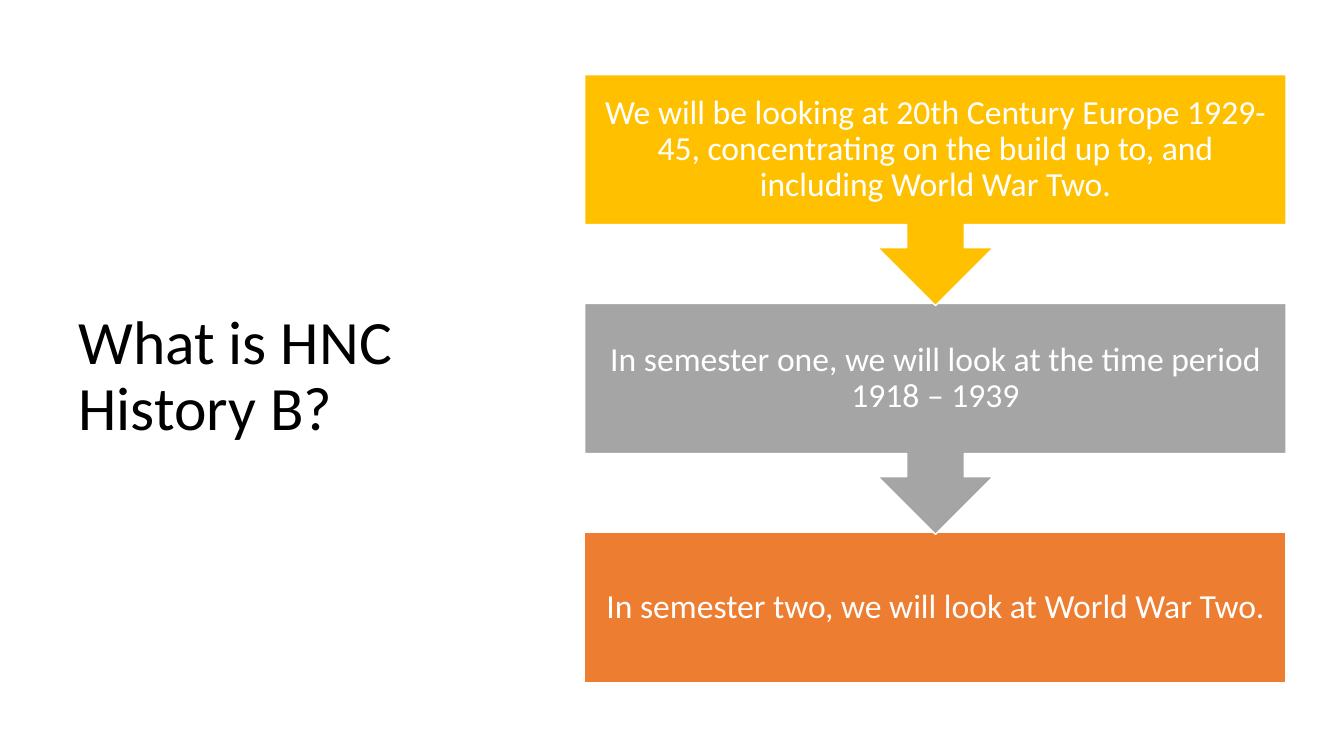
from dataclasses import dataclass

import pptx
import pptx.dml.color
import pptx.enum.shapes
import pptx.enum.text
import pptx.util

EMU_PER_PX = 9525
SLIDE_WIDTH, SLIDE_HEIGHT = 1280, 720
STEP_LEFT, STEP_TOP, STEP_WIDTH, STEP_PITCH = 557, 71, 668, 218
BOX_HEIGHT, CALLOUT_HEIGHT = 143, 220
BOX_INSET = 18

Color = pptx.dml.color.RGBColor
ShapeType = pptx.enum.shapes.MSO_SHAPE
Align = pptx.enum.text.PP_ALIGN


@dataclass(frozen=True)
class Theme:
    font: str = "Calibri"
    title_size: int = 44
    step_size: int = 24
    dark: Color = Color(0x00, 0x00, 0x00)
    light: Color = Color(0xFF, 0xFF, 0xFF)
    gold: Color = Color(0xFF, 0xC0, 0x00)
    gray: Color = Color(0xA5, 0xA5, 0xA5)
    orange: Color = Color(0xED, 0x7D, 0x31)


THEME = Theme()


@dataclass(frozen=True)
class Step:
    text: str
    fill: Color


STEPS = [
    Step(
        "We will be looking at 20th Century Europe 1929-45, "
        "concentrating on the build up to, and including World War Two.",
        THEME.gold,
    ),
    Step("In semester one, we will look at the time period 1918 – 1939", THEME.gray),
    Step("In semester two, we will look at World War Two.", THEME.orange),
]


def px(length: int) -> pptx.util.Emu:
    return pptx.util.Emu(length * EMU_PER_PX)


def set_attributes(target: object, values: dict[str, object]) -> None:
    for name, value in values.items():
        setattr(target, name, value)


def write_text(
    text_frame: pptx.text.text.TextFrame,
    text: str,
    size: int,
    color: Color,
    alignment: Align,
) -> None:
    set_attributes(text_frame, {
        "text": text,
        "word_wrap": True,
        "auto_size": pptx.enum.text.MSO_AUTO_SIZE.NONE,
        "vertical_anchor": pptx.enum.text.MSO_ANCHOR.MIDDLE,
    })
    paragraph = text_frame.paragraphs[0]
    set_attributes(paragraph, {"alignment": alignment, "line_spacing": 0.9})
    font = paragraph.runs[0].font
    set_attributes(font, {"name": THEME.font, "size": pptx.util.Pt(size)})
    font.color.rgb = color


def draw_title(slide: pptx.slide.Slide, text: str) -> None:
    title = slide.shapes.title
    set_attributes(title, {
        "left": px(65), "top": px(122), "width": px(378), "height": px(475),
    })
    write_text(title.text_frame, text, THEME.title_size, THEME.dark, Align.LEFT)


def draw_step(slide: pptx.slide.Slide, step: Step, index: int, is_last: bool) -> None:
    shape = slide.shapes.add_shape(
        ShapeType.RECTANGLE if is_last else ShapeType.DOWN_ARROW_CALLOUT,
        px(STEP_LEFT),
        px(STEP_TOP + index * STEP_PITCH),
        px(STEP_WIDTH),
        px(BOX_HEIGHT if is_last else CALLOUT_HEIGHT),
    )
    shape.shadow.inherit = False
    shape.fill.solid()
    shape.fill.fore_color.rgb = step.fill
    shape.line.color.rgb = THEME.light
    shape.line.width = pptx.util.Pt(1)
    sides = ("left", "top", "right", "bottom")
    set_attributes(shape.text_frame, {f"margin_{side}": px(BOX_INSET) for side in sides})
    write_text(shape.text_frame, step.text, THEME.step_size, THEME.light, Align.CENTER)


def main() -> None:
    presentation = pptx.Presentation()
    set_attributes(presentation, {
        "slide_width": px(SLIDE_WIDTH), "slide_height": px(SLIDE_HEIGHT),
    })
    slide = presentation.slides.add_slide(presentation.slide_layouts[5])
    draw_title(slide, "What is HNC History B?")
    last = len(STEPS) - 1
    for index, step in reversed(list(enumerate(STEPS))):
        draw_step(slide, step, index, index == last)
    presentation.save("out.pptx")


if __name__ == "__main__":
    main()
